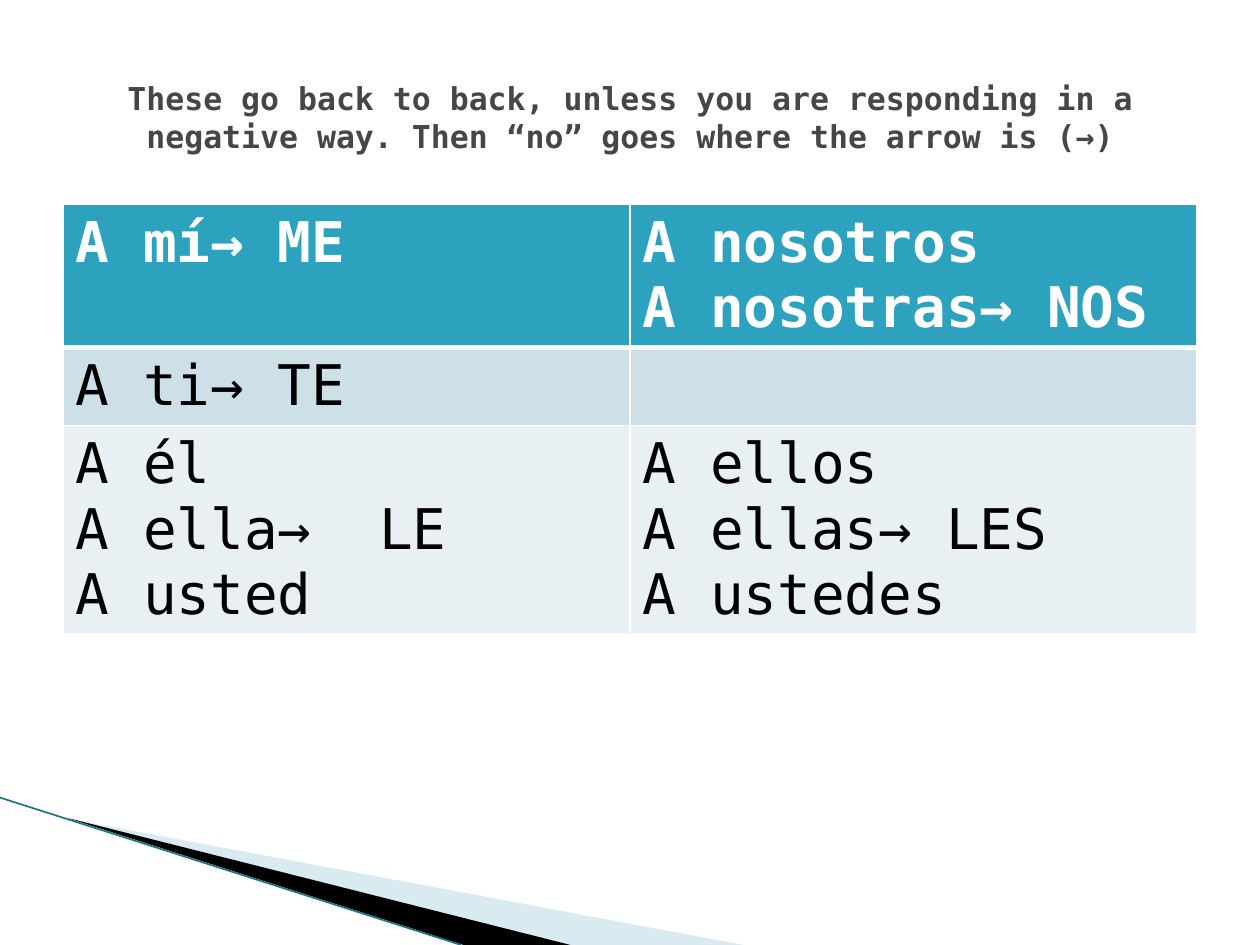
from lxml import etree
from pptx import Presentation
from pptx import util as u
from pptx.dml.color import RGBColor
from pptx.enum import shapes, text
from pptx.oxml.ns import qn

FONT = "DejaVu Sans Mono"
WIDTH, HEIGHT = 10, 7.5
MARGIN = 0.05 * WIDTH

TITLE = ("These go back to back, unless you are responding in a negative way. "
         "Then “no” goes where the arrow is (→)")
PRONOUNS = [
    [["A mí→ ME"], ["A nosotros", "A nosotras→ NOS"]],
    [["A ti→ TE"], []],
    [["A él", "A ella→  LE", "A usted"], ["A ellos", "A ellas→ LES", "A ustedes"]],
]
ROW_FILLS = ["2DA2BF", "CDE0E8", "E8F0F4"]
ROW_HEIGHTS = [1.13, 0.62, 1.65]
TABLE_TOP = 1.62

# corner points, fill, opacity in percent
WEDGES = [
    ([(0.55, 6.5), (5.9, 7.5), (4.53, 7.5)], "A0CBDC", 40),
    ([(0.53, 6.49), (4.53, 7.5), (3.68, 7.5)], "000000", 100),
]
EDGE = [(0, 6.33), (3.66, 7.5)]


def color(hex_code):
    return RGBColor.from_string(hex_code)


def write(frame, lines, size=32, ink="000000", bold=False, align=text.PP_ALIGN.LEFT):
    for i, line in enumerate(lines):
        paragraph = frame.paragraphs[0] if i == 0 else frame.add_paragraph()
        paragraph.alignment = align
        run = paragraph.add_run()
        run.text = line
        font = run.font
        font.name, font.size, font.bold = FONT, u.Pt(size), bold
        font.color.rgb = color(ink)


def set_borders(cell, **widths):
    """Draw white borders; widths in points are keyed by side: L, R, T, B."""
    properties = cell._tc.get_or_add_tcPr()
    for side, width in widths.items():
        border = etree.SubElement(properties, qn(f"a:ln{side}"), w=str(u.Pt(width)))
        fill = etree.SubElement(border, qn("a:solidFill"))
        etree.SubElement(fill, qn("a:srgbClr"), val="FFFFFF")


def add_wedge(slide, points, fill, opacity):
    corners = [(u.Inches(x), u.Inches(y)) for x, y in points]
    builder = slide.shapes.build_freeform(*corners[0])
    builder.add_line_segments(corners[1:], close=True)
    wedge = builder.convert_to_shape()
    wedge.shadow.inherit = False
    wedge.line.fill.background()
    wedge.fill.solid()
    wedge.fill.fore_color.rgb = color(fill)
    if opacity < 100:
        tint = wedge._element.spPr.find(f".//{qn('a:srgbClr')}")
        etree.SubElement(tint, qn("a:alpha"), val=str(opacity * 1000))


def add_edge(slide, start, end):
    edge = slide.shapes.add_connector(
        shapes.MSO_CONNECTOR.STRAIGHT, *map(u.Inches, start + end))
    edge.line.color.rgb = color("1B7587")
    edge.line.width = u.Pt(0.95)
    etree.SubElement(edge._element.spPr, qn("a:effectLst"))


def add_title(slide):
    title = slide.shapes.title
    title.left, title.top = u.Inches(MARGIN), u.Inches(0.04 * HEIGHT)
    title.width, title.height = u.Inches(WIDTH - 2 * MARGIN), u.Inches(1.25)
    frame = title.text_frame
    frame.word_wrap = True
    frame.auto_size = text.MSO_AUTO_SIZE.NONE
    frame.vertical_anchor = text.MSO_ANCHOR.MIDDLE
    write(frame, [TITLE], size=18, ink="464646", bold=True,
          align=text.PP_ALIGN.CENTER)


def add_pronoun_table(slide):
    table = slide.shapes.add_table(
        len(PRONOUNS), len(PRONOUNS[0]), u.Inches(MARGIN), u.Inches(TABLE_TOP),
        u.Inches(WIDTH - 2 * MARGIN), u.Inches(sum(ROW_HEIGHTS))).table
    for r, (row, fill, height) in enumerate(zip(PRONOUNS, ROW_FILLS, ROW_HEIGHTS)):
        table.rows[r].height = u.Inches(height)
        header = r == 0
        for c, lines in enumerate(row):
            cell = table.cell(r, c)
            set_borders(cell, L=1, R=1, T=3 if r == 1 else 1, B=3 if header else 1)
            cell.fill.solid()
            cell.fill.fore_color.rgb = color(fill)
            write(cell.text_frame, lines, bold=header,
                  ink="FFFFFF" if header else "000000")


def main():
    deck = Presentation()
    deck.slide_width, deck.slide_height = u.Inches(WIDTH), u.Inches(HEIGHT)
    slide = deck.slides.add_slide(deck.slide_layouts.get_by_name("Title Only"))
    for wedge in WEDGES:
        add_wedge(slide, *wedge)
    add_edge(slide, *EDGE)
    add_pronoun_table(slide)
    add_title(slide)
    deck.save("out.pptx")


if __name__ == "__main__":
    main()
